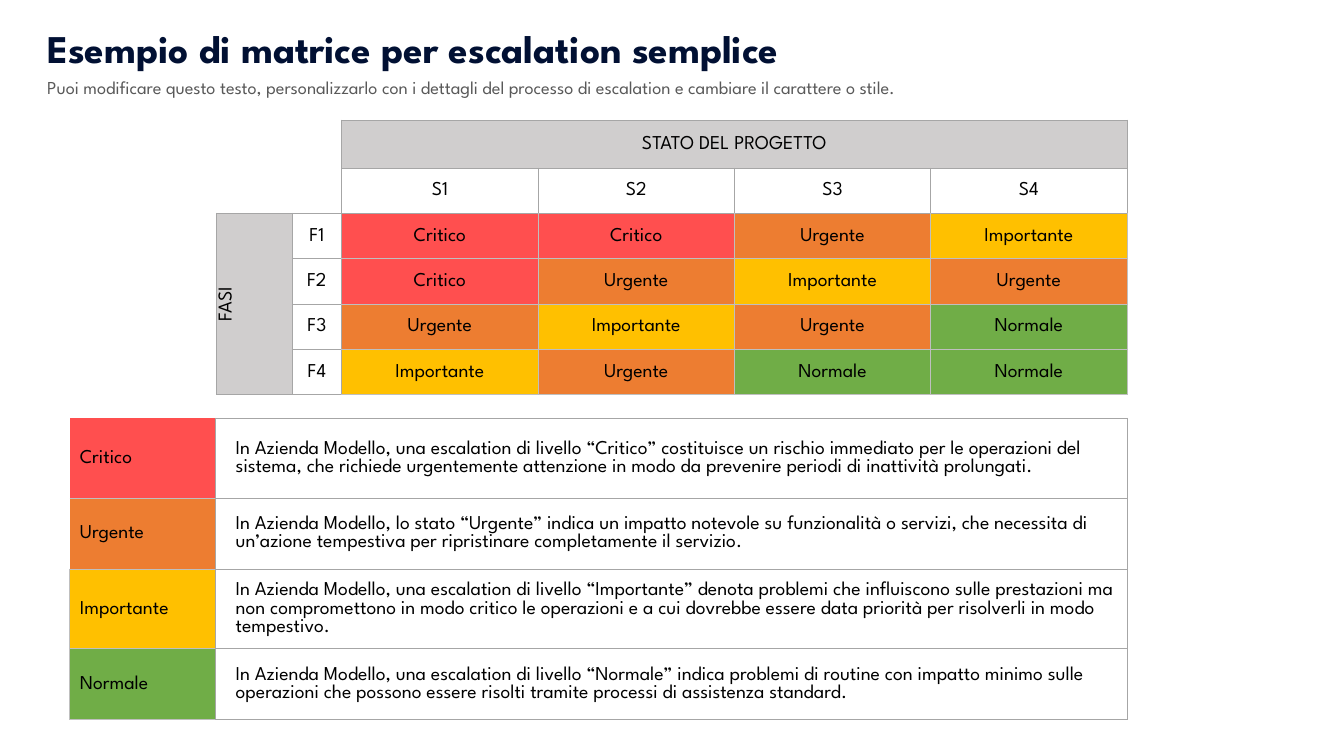
from dataclasses import dataclass

from lxml.etree import SubElement
from pptx import Presentation
from pptx.dml.color import RGBColor
from pptx.enum.text import MSO_ANCHOR as Anchor, PP_ALIGN as Align
from pptx.oxml.ns import qn
from pptx.slide import Slide
from pptx.table import Table, _Cell as Cell
from pptx.text.text import _Paragraph as Paragraph
from pptx.util import Emu, Inches, Pt

SLIDE_WIDTH, SLIDE_HEIGHT = Inches(13.33), Inches(7.5)
FONT = "League Spartan"
BLACK, WHITE, HEADER_GREY = "000000", "FFFFFF", "D0CECE"
DARK_GREY, LIGHT_GREY = "A6A6A6", "BFBFBF"
NO_STYLE = "{2D5ABB26-0587-4C30-8999-92F81FD0307C}"
LEVEL_COLORS = {"Critico": "FF4F4F", "Urgente": "ED7D31", "Importante": "FFC000", "Normale": "70AD47"}

MATRIX_ROWS = [
    ["Critico", "Critico", "Urgente", "Importante"],
    ["Critico", "Urgente", "Importante", "Urgente"],
    ["Urgente", "Importante", "Urgente", "Normale"],
    ["Importante", "Urgente", "Normale", "Normale"],
]
DESCRIPTIONS = {
    "Critico": "In Azienda Modello, una escalation di livello “Critico” costituisce un rischio immediato per le operazioni del sistema, che richiede urgentemente attenzione in modo da prevenire periodi di inattività prolungati.",
    "Urgente": "In Azienda Modello, lo stato “Urgente” indica un impatto notevole su funzionalità o servizi, che necessita di un’azione tempestiva per ripristinare completamente il servizio.",
    "Importante": "In Azienda Modello, una escalation di livello “Importante” denota problemi che influiscono sulle prestazioni ma non compromettono in modo critico le operazioni e a cui dovrebbe essere data priorità per risolverli in modo tempestivo.",
    "Normale": "In Azienda Modello, una escalation di livello “Normale” indica problemi di routine con impatto minimo sulle operazioni che possono essere risolti tramite processi di assistenza standard.",
}
# Borders of the cells that do not have all four sides
CORNER_SIDES = {(0, 0): "", (0, 1): "R", (1, 0): "B", (1, 1): "RB"}
LEGEND_SIDES = {"Critico": "RB", "Urgente": "RTB"}


@dataclass
class Heading:
    """Text box placed in percent of the slide."""
    text: str
    top: float
    width: float
    height: float
    size: int
    color: str
    bold: bool
    anchor: Anchor


@dataclass
class CellStyle:
    fill: str | None = None
    sides: str = "LRTB"
    dark_sides: str = "LRTB"
    align: Align = Align.CENTER
    left_inset: float = 0.01
    right_inset: float = 0.01


HEADINGS = [
    Heading("Esempio di matrice per escalation semplice", 2.53, 85.35, 7.6, 28, "011033", True, Anchor.BOTTOM),
    Heading("Puoi modificare questo testo, personalizzarlo con i dettagli del processo di escalation e cambiare il carattere o stile.",
            9.33, 87.53, 4.27, 13, "595959", False, Anchor.BOTTOM),
]


def across(percent: float) -> Emu:
    return Emu(round(SLIDE_WIDTH * percent / 100))


def down(percent: float) -> Emu:
    return Emu(round(SLIDE_HEIGHT * percent / 100))


def rgb(color: str) -> RGBColor:
    return RGBColor.from_string(color)


def write(paragraph: Paragraph, text: str, size: int = 14, color: str = BLACK, bold: bool = False) -> None:
    run = paragraph.add_run()
    run.text = text
    for name, value in {"name": FONT, "size": Pt(size), "bold": bold}.items():
        setattr(run.font, name, value)
    run.font.color.rgb = rgb(color)


def add_heading(slide: Slide, heading: Heading) -> None:
    box = slide.shapes.add_textbox(across(2.78), down(heading.top), across(heading.width), down(heading.height))
    box.text_frame.word_wrap = True
    box.text_frame.vertical_anchor = heading.anchor
    write(box.text_frame.paragraphs[0], heading.text, heading.size, heading.color, heading.bold)


def add_plain_table(slide: Slide, left: float, top: float, widths: list[float], heights: list[float]) -> Table:
    """Add an unstyled table sized in percent of the slide."""
    frame = slide.shapes.add_table(len(heights), len(widths), across(left), down(top),
                                   across(sum(widths)), down(sum(heights)))
    table = frame.table
    table.first_row = table.horz_banding = False
    table._tbl.tblPr.find(qn("a:tableStyleId")).text = NO_STYLE
    for column, width in zip(table.columns, widths):
        column.width = across(width)
    for row, height in zip(table.rows, heights):
        row.height = down(height)
    return table


def fill_cell(cell: Cell, text: str, style: CellStyle) -> None:
    properties = cell._tc.get_or_add_tcPr()
    for side in "LRTB":
        line = SubElement(properties, qn(f"a:ln{side}"), w=str(Pt(0.5)))
        if side in style.sides:
            color = DARK_GREY if side in style.dark_sides else LIGHT_GREY
            SubElement(SubElement(line, qn("a:solidFill")), qn("a:srgbClr"), val=color)
        else:
            SubElement(line, qn("a:noFill"))
    if style.fill:
        cell.fill.solid()
        cell.fill.fore_color.rgb = rgb(style.fill)
    else:
        cell.fill.background()
    layout = {"vertical_anchor": Anchor.MIDDLE, "margin_left": Inches(style.left_inset), "margin_top": Inches(0.01),
              "margin_right": Inches(style.right_inset), "margin_bottom": 0}
    for name, value in layout.items():
        setattr(cell, name, value)
    if text:
        paragraph = cell.text_frame.paragraphs[0]
        paragraph.alignment = style.align
        write(paragraph, text)


def matrix_style(row: int, column: int, text: str) -> CellStyle:
    if (row, column) in CORNER_SIDES:
        return CellStyle(sides=CORNER_SIDES[row, column])
    if text in LEVEL_COLORS:
        dark_sides = ("T" if row == 2 else "") + ("L" if column == 2 else "")
        return CellStyle(LEVEL_COLORS[text], dark_sides=dark_sides)
    return CellStyle(HEADER_GREY if row == 0 or column == 0 else WHITE)


def add_matrix(slide: Slide) -> None:
    table = add_plain_table(slide, 16.13, 15.87, [5.6, 3.7] + [14.61] * 4, [6.35] + [6] * 5)
    texts = [["", "", "STATO DEL PROGETTO", "", "", ""], ["", "", "S1", "S2", "S3", "S4"]]
    for number, levels in enumerate(MATRIX_ROWS, start=1):
        texts.append(["FASI" if number == 1 else "", f"F{number}", *levels])
    for row, row_texts in enumerate(texts):
        for column, text in enumerate(row_texts):
            fill_cell(table.cell(row, column), text, matrix_style(row, column, text))
    table.cell(0, 2).merge(table.cell(0, 5))
    phases = table.cell(2, 0)
    phases.merge(table.cell(5, 0))
    phases._tc.get_or_add_tcPr().set("vert", "vert270")


def add_legend(slide: Slide) -> None:
    table = add_plain_table(slide, 5.19, 55.33, [10.85, 67.84], [10.53, 9.42] * 2)
    for row, (level, description) in enumerate(DESCRIPTIONS.items()):
        level_style = CellStyle(LEVEL_COLORS[level], LEGEND_SIDES.get(level, "LRTB"), "R", Align.LEFT, 0.1)
        fill_cell(table.cell(row, 0), level, level_style)
        fill_cell(table.cell(row, 1), description, CellStyle(align=Align.LEFT, left_inset=0.2, right_inset=0.1))


def main() -> None:
    presentation = Presentation()
    presentation.slide_width, presentation.slide_height = SLIDE_WIDTH, SLIDE_HEIGHT
    slide = presentation.slides.add_slide(presentation.slide_layouts[6])
    for heading in HEADINGS:
        add_heading(slide, heading)
    add_matrix(slide)
    add_legend(slide)
    presentation.save("out.pptx")


if __name__ == "__main__":
    main()
